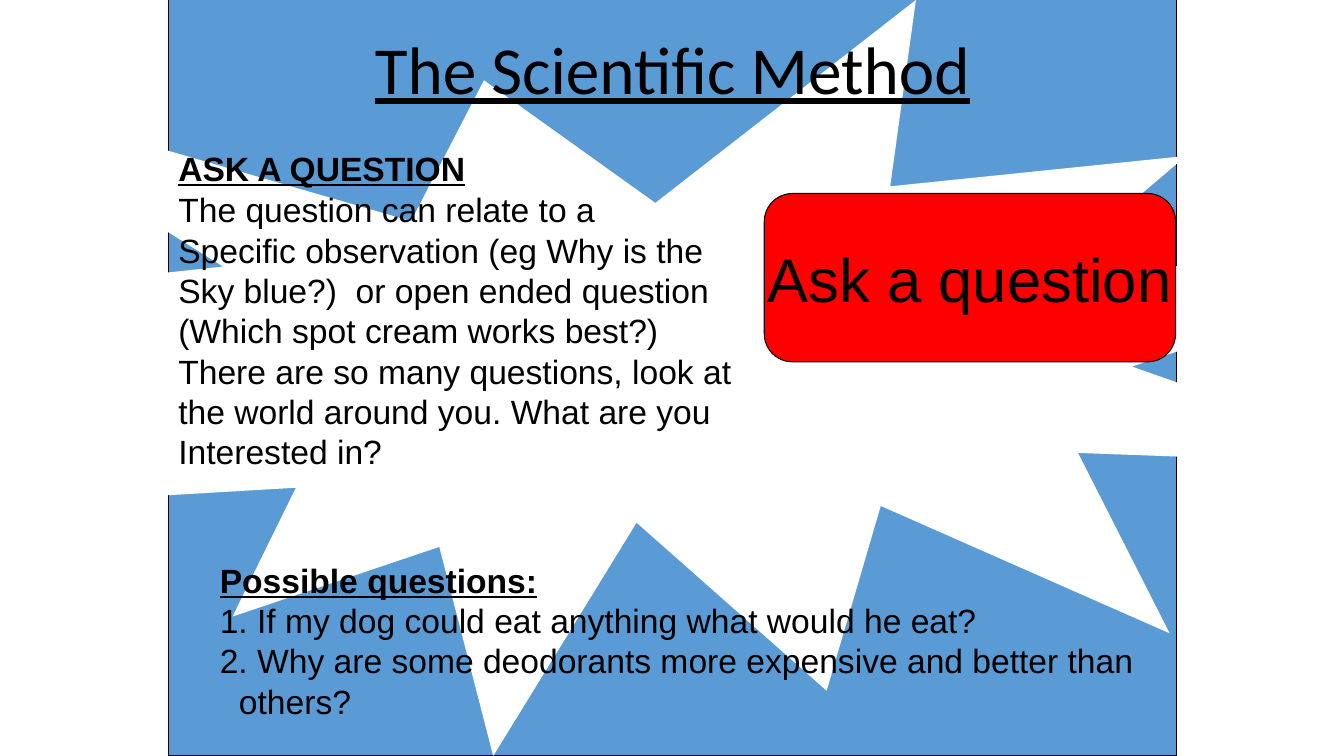
from pptx import Presentation
from pptx.dml.color import RGBColor
from pptx.enum.shapes import MSO_SHAPE
from pptx.enum.text import MSO_ANCHOR, MSO_AUTO_SIZE, PP_ALIGN
from pptx.oxml.ns import qn
from pptx.util import Inches, Pt

BLUE = RGBColor(0x5B, 0x9B, 0xD5)
RED = RGBColor(0xFF, 0x00, 0x00)
WHITE = RGBColor(0xFF, 0xFF, 0xFF)
BLACK = RGBColor(0x00, 0x00, 0x00)

RECT = MSO_SHAPE.RECTANGLE
BURST = MSO_SHAPE.EXPLOSION1
BUTTON = MSO_SHAPE.FLOWCHART_ALTERNATE_PROCESS
CENTER, LEFT = PP_ALIGN.CENTER, PP_ALIGN.LEFT
TOP, MIDDLE = MSO_ANCHOR.TOP, MSO_ANCHOR.MIDDLE
NO_FIT = MSO_AUTO_SIZE.NONE

PANEL_LEFT, PANEL_WIDTH = 1.67, 10
HANGING = 0.19


class SlideBuilder:
    font = "Arial"
    size = 24

    def __init__(self, slide):
        self.s = slide

    def shape(self, kind, x, y, w, h, fill, outlined=True):
        sp = self.s.shapes.add_shape(
            kind, Inches(x), Inches(y), Inches(w), Inches(h))
        sp.shadow.inherit = False
        sp.fill.solid()
        sp.fill.fore_color.rgb = fill
        if outlined:
            sp.line.color.rgb = BLACK
            sp.line.width = Pt(0.75)
        else:
            sp.line.fill.background()
        return sp

    def textbox(self, x, y, w, h, lines, wrap=True, heading=False):
        sp = self.s.shapes.add_textbox(
            Inches(x), Inches(y), Inches(w), Inches(h))
        self.frame(sp, wrap=wrap)
        for i, line in enumerate(lines):
            self.paragraph(sp, i, line, heading=heading)

    def placeholder(self, sp, x, y, w, h):
        """Place a template placeholder in front of the shapes drawn so far."""
        sp.left, sp.top = Inches(x), Inches(y)
        sp.width, sp.height = Inches(w), Inches(h)
        self.s.shapes._spTree.append(sp._element)
        self.frame(sp)
        return sp

    def frame(self, sp, anchor=TOP, wrap=True):
        tf = sp.text_frame
        tf.auto_size = NO_FIT
        tf.word_wrap = wrap
        tf.vertical_anchor = anchor

    def paragraph(self, sp, index, text, align=LEFT, heading=False,
                  size=None, font=None):
        tf = sp.text_frame
        p = tf.paragraphs[0] if index == 0 else tf.add_paragraph()
        p.alignment = align
        p.space_before = Pt(0)
        r = p.add_run()
        r.text = text
        r.font.name = font or self.font
        r.font.size = Pt(size or self.size)
        r.font.color.rgb = BLACK
        r.font.bold = r.font.underline = heading
        return p

    def hang(self, p, inches):
        """Replace the template bullet by a hanging indent."""
        pPr = p._p.get_or_add_pPr()
        pPr.set("marL", str(Inches(inches)))
        pPr.set("indent", str(-Inches(inches)))
        pPr.append(pPr.makeelement(qn("a:buNone"), {}))


def main():
    prs = Presentation()
    prs.slide_width, prs.slide_height = Inches(13.33), Inches(7.5)
    s = prs.slides.add_slide(prs.slide_layouts[1])
    b = SlideBuilder(s)
    title, body = s.shapes.title, s.placeholders[1]

    # Background panel and burst
    b.shape(RECT, PANEL_LEFT, 0, PANEL_WIDTH, 7.5, BLUE)
    b.shape(BURST, -1, 0, 15, 7.5, WHITE, outlined=False)

    # Title
    b.placeholder(title, PANEL_LEFT, 0.31, PANEL_WIDTH, 1)
    p = b.paragraph(title, 0, "The Scientific Method", CENTER,
                    size=48, font="Calibri")
    p.line_spacing = 0.9
    p.runs[0].font.underline = True

    # Step button
    button = b.shape(BUTTON, 7.58, 1.92, 4.08, 1.67, RED)
    b.frame(button, MIDDLE, wrap=False)
    b.paragraph(button, 0, "Ask a question", CENTER, size=44)

    # Explanation
    b.textbox(PANEL_LEFT, 1.83, 5.92, 3.33, [
        "The question can relate to a",
        "Specific observation (eg Why is the",
        "Sky blue?)  or open ended question",
        "(Which spot cream works best?)",
        "There are so many questions, look at",
        "the world around you. What are you",
        "Interested in?",
    ])
    b.textbox(PANEL_LEFT, 1.42, 3.07, 0.5, ["ASK A QUESTION"],
              wrap=False, heading=True)

    # Possible questions
    b.placeholder(body, 2.08, 5.5, 9.58, 1.9)
    questions = [
        "Possible questions:",
        "1. If my dog could eat anything what would he eat?",
        "2. Why are some deodorants more expensive and better than others?",
    ]
    for i, question in enumerate(questions):
        p = b.paragraph(body, i, question, heading=i == 0)
        b.hang(p, HANGING)

    prs.save("out.pptx")


if __name__ == "__main__":
    main()
